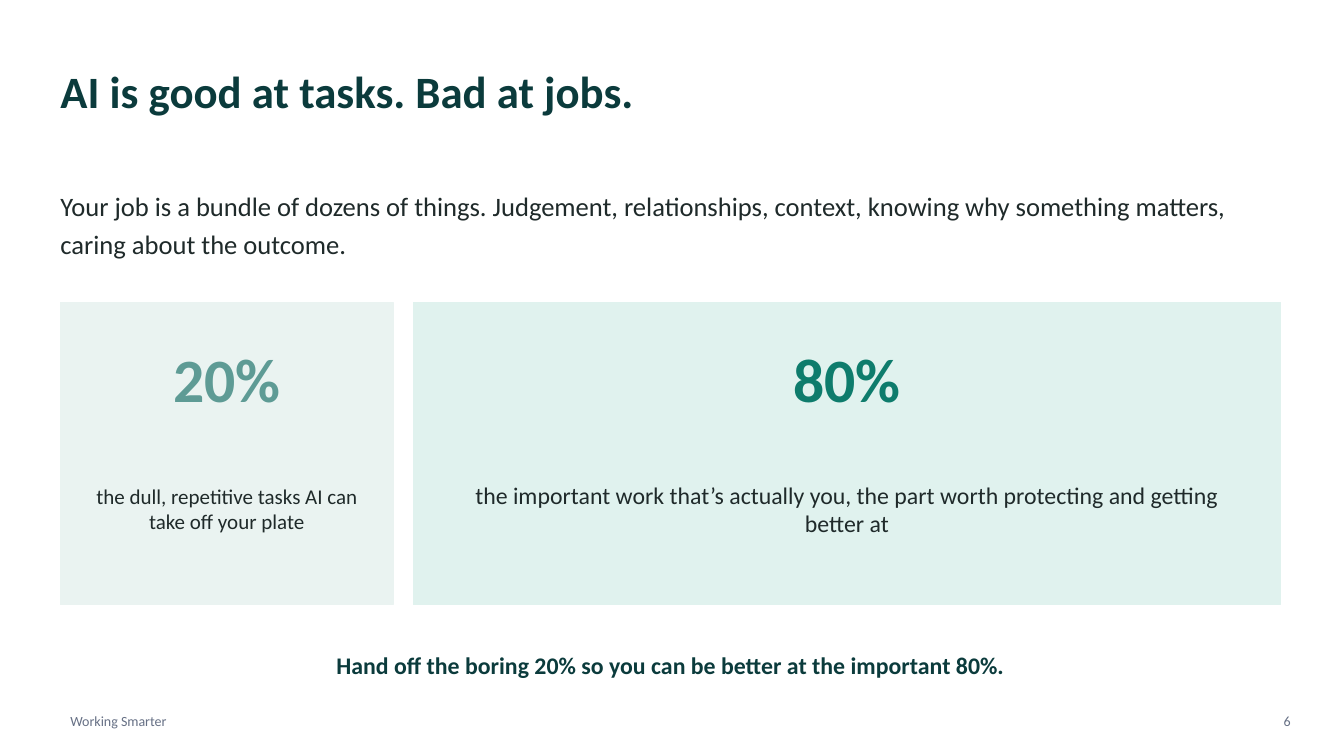
from pptx import Presentation
from pptx.dml.color import RGBColor
from pptx.enum.shapes import MSO_SHAPE
from pptx.enum.text import MSO_ANCHOR, MSO_AUTO_SIZE, PP_ALIGN
from pptx.util import Inches, Pt

LEFT, CENTER, RIGHT = PP_ALIGN.LEFT, PP_ALIGN.CENTER, PP_ALIGN.RIGHT
MIDDLE = MSO_ANCHOR.MIDDLE
NO_AUTOFIT = MSO_AUTO_SIZE.NONE
RECTANGLE = MSO_SHAPE.RECTANGLE

TITLE = "AI is good at tasks. Bad at jobs."
INTRO = (
    "Your job is a bundle of dozens of things. Judgement, relationships, context, "
    "knowing why something matters, caring about the outcome."
)
CARDS = [
    {
        "share": "20%",
        "caption": "the dull, repetitive tasks AI can take off your plate",
        "width": 3.3,
        "padding": 0.25,
        "fill": "light",
        "share_style": "minor_share",
        "caption_style": "minor_caption",
    },
    {
        "share": "80%",
        "caption": "the important work that’s actually you, the part worth protecting and getting better at",
        "width": 8.6,
        "padding": 0.5,
        "fill": "mint",
        "share_style": "major_share",
        "caption_style": "major_caption",
    },
]
TAKEAWAY = "Hand off the boring 20% so you can be better at the important 80%."
FOOTER = "Working Smarter"
PAGE_NUMBER = "6"

THEME = {
    "font": "Calibri",
    "colors": {
        "white": "FFFFFF",
        "dark": "0B3B3C",
        "ink": "1F2A2A",
        "muted": "667085",
        "sage": "5E9B95",
        "green": "0E7C6C",
        "light": "EAF3F1",
        "mint": "E0F2EE",
    },
    "styles": {
        "title": {"size": 32, "bold": True, "color": "dark", "alignment": LEFT},
        "intro": {"size": 19, "bold": False, "color": "ink", "alignment": LEFT},
        "minor_share": {"size": 44, "bold": True, "color": "sage", "alignment": CENTER},
        "major_share": {"size": 44, "bold": True, "color": "green", "alignment": CENTER},
        "minor_caption": {"size": 15, "bold": False, "color": "ink", "alignment": CENTER},
        "major_caption": {"size": 17, "bold": False, "color": "ink", "alignment": CENTER},
        "takeaway": {"size": 17, "bold": True, "color": "dark", "alignment": CENTER},
        "footer": {"size": 10, "bold": False, "color": "muted", "alignment": LEFT},
        "page_number": {"size": 10, "bold": False, "color": "muted", "alignment": RIGHT},
    },
}

MARGIN = 0.6
CONTENT_WIDTH = 12.1
CARD_TOP, CARD_HEIGHT, CARD_GAP = 3, 3, 0.2


def theme_color(name):
    return RGBColor.from_string(THEME["colors"][name])


def write_text(shape, text, style_name, inset=(0, 0), line_spacing=1.0):
    style = THEME["styles"][style_name]
    horizontal, vertical = (Inches(value) for value in inset)
    frame_format = {
        "word_wrap": True,
        "auto_size": NO_AUTOFIT,
        "vertical_anchor": MIDDLE,
        "margin_left": horizontal,
        "margin_right": horizontal,
        "margin_top": vertical,
        "margin_bottom": vertical,
    }
    for name, value in frame_format.items():
        setattr(shape.text_frame, name, value)
    paragraph = shape.text_frame.paragraphs[0]
    paragraph.alignment = style["alignment"]
    paragraph.line_spacing = line_spacing
    run = paragraph.add_run()
    run.text = text
    font_format = {"name": THEME["font"], "size": Pt(style["size"]), "bold": style["bold"]}
    for name, value in font_format.items():
        setattr(run.font, name, value)
    run.font.color.rgb = theme_color(style["color"])


def add_text(slide, box, text, style_name, **options):
    shape = slide.shapes.add_textbox(*(Inches(value) for value in box))
    write_text(shape, text, style_name, **options)


def add_title(slide):
    title = slide.shapes.title
    box = {"left": MARGIN, "top": 0.45, "width": CONTENT_WIDTH, "height": 0.9}
    for name, value in box.items():
        setattr(title, name, Inches(value))
    write_text(title, TITLE, "title")


def add_card(slide, card, left):
    width, padding = card["width"], card["padding"]
    box = (left, CARD_TOP, width, CARD_HEIGHT)
    panel = slide.shapes.add_shape(RECTANGLE, *(Inches(value) for value in box))
    panel.shadow.inherit = False
    panel.fill.solid()
    panel.fill.fore_color.rgb = theme_color(card["fill"])
    panel.line.color.rgb = theme_color(card["fill"])
    panel.line.width = Pt(1)
    add_text(slide, (left, CARD_TOP + 0.3, width, 0.9), card["share"], card["share_style"])
    caption_box = (left + padding, CARD_TOP + 1.3, width - 2 * padding, 1.5)
    add_text(slide, caption_box, card["caption"], card["caption_style"])


def main():
    presentation = Presentation()
    presentation.slide_width = Inches(13.33)
    presentation.slide_height = Inches(7.5)
    slide = presentation.slides.add_slide(presentation.slide_layouts[5])
    slide.background.fill.solid()
    slide.background.fill.fore_color.rgb = theme_color("white")

    add_title(slide)
    add_text(slide, (MARGIN, 1.7, CONTENT_WIDTH, 1), INTRO, "intro", line_spacing=1.2)
    left = MARGIN
    for card in CARDS:
        add_card(slide, card, left)
        left += card["width"] + CARD_GAP
    add_text(slide, (MARGIN, 6.35, CONTENT_WIDTH, 0.5), TAKEAWAY, "takeaway")
    add_text(slide, (MARGIN, 7, 4, 0.3), FOOTER, "footer", inset=(0.1, 0.05))
    add_text(slide, (12.4, 7, 0.5, 0.3), PAGE_NUMBER, "page_number", inset=(0.1, 0.05))
    presentation.save("out.pptx")


if __name__ == "__main__":
    main()
